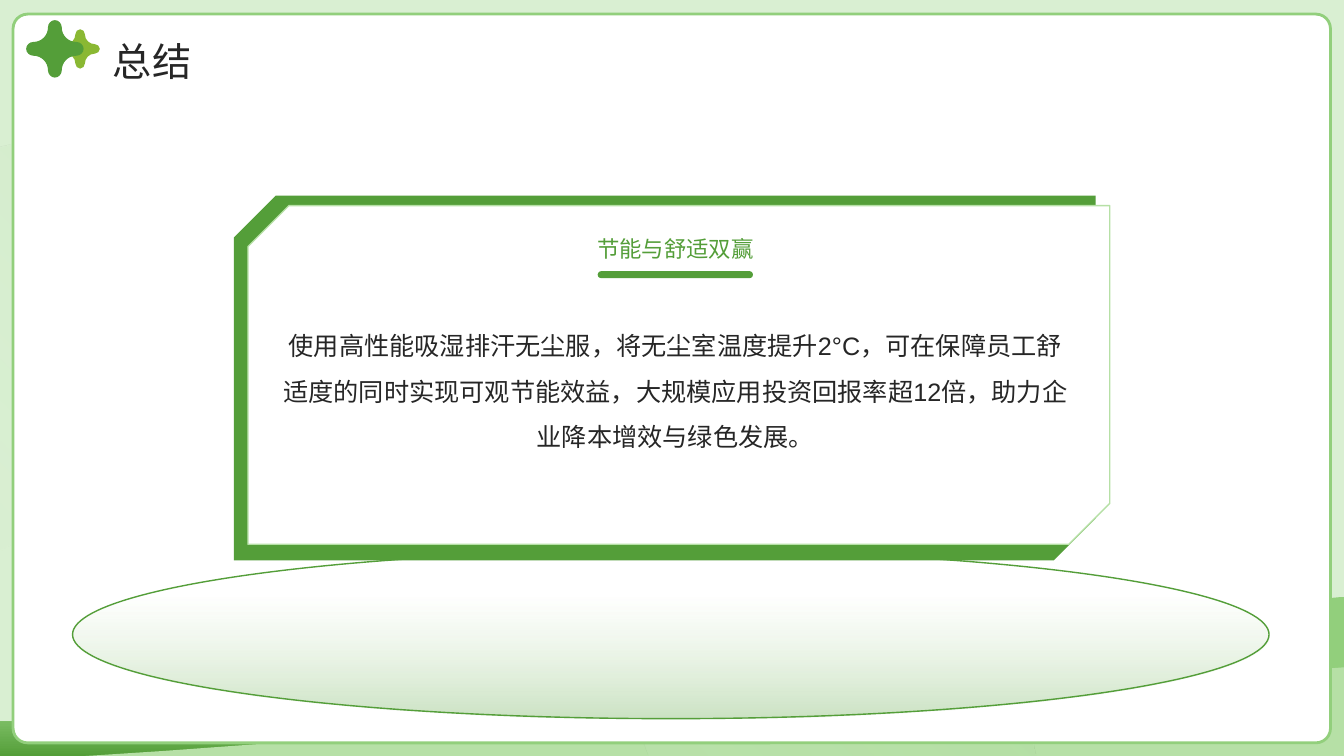
from lxml import etree
from pptx import Presentation
from pptx.dml.color import RGBColor
from pptx.enum.shapes import MSO_SHAPE
from pptx.enum.text import MSO_ANCHOR, MSO_AUTO_SIZE, PP_ALIGN
from pptx.oxml.ns import qn
from pptx.util import Inches, Pt

TITLE = "总结"
CARD_HEADING = "节能与舒适双赢"
CARD_BODY = (
    "使用高性能吸湿排汗无尘服，将无尘室温度提升2°C，可在保障员工舒适度的同时实现可观节能效益，"
    "大规模应用投资回报率超12倍，助力企业降本增效与绿色发展。"
)

FONT = "Arial"
INK = RGBColor(0x26, 0x26, 0x26)
WHITE = RGBColor(0xFF, 0xFF, 0xFF)
GREEN = RGBColor(0x54, 0x9E, 0x39)
MID_GREEN = RGBColor(0x92, 0xCF, 0x7C)
SOFT_GREEN = RGBColor(0xB6, 0xE0, 0xA6)
PALE_GREEN = RGBColor(0xD9, 0xEF, 0xD2)
LIME = RGBColor(0x8A, 0xB8, 0x33)

RECT = MSO_SHAPE.RECTANGLE
ROUNDED = MSO_SHAPE.ROUNDED_RECTANGLE
OVAL = MSO_SHAPE.OVAL
SNIPPED = MSO_SHAPE.SNIP_2_DIAG_RECTANGLE
CENTER, LEFT = PP_ALIGN.CENTER, PP_ALIGN.LEFT
TOP, BOTTOM = MSO_ANCHOR.TOP, MSO_ANCHOR.BOTTOM

HEIGHT = 7.5
WIDTH = HEIGHT * 16 / 9

# Outlines: each step is one point (a line) or three points (a Bezier curve)
HILL = [
    [(WIDTH, 5.92)], [(WIDTH, HEIGHT)], [(0, HEIGHT)], [(0, 7.16)], [(0.13, 7.16)],
    [(4.08, 7.09), (9.13, 6.34), (12.7, 5.98)],
]
SLOPE = [
    [(WIDTH, 6.62)], [(WIDTH, HEIGHT)], [(0.85, HEIGHT)], [(1.62, 7.45)],
    [(5.62, 7.16), (9.43, 6.89), (12.83, 6.66)],
]
ARCH = [
    [(2.35, 1.12)], [(1.65, 1.12), (0.97, 1.21), (0.33, 1.38)],
    [(0, 1.47)], [(0, 5.47)], [(0.05, 5.44)],
    [(0.72, 5.03), (1.51, 4.8), (2.35, 4.8)],
    [(4.12, 4.8), (5.64, 5.82), (6.36, 7.31)],
    [(6.44, HEIGHT)], [(10.28, HEIGHT)], [(10.21, 7.21)],
    [(9.31, 3.71), (6.13, 1.12), (2.35, 1.12)],
]
# One arm of a star with radius 1, turned four times
STAR_ARM = [
    [(0.75, -0.24)],
    [(0.48, -0.24), (0.24, -0.45), (0.24, -0.75)],
    [(0.24, -0.88), (0.13, -1), (0, -1)],
    [(-0.13, -1), (-0.24, -0.88), (-0.24, -0.75)],
]
# Gradient stops: position %, colour, opacity %
HILL_STOPS = [(0, MID_GREEN, 100), (65, MID_GREEN, 100), (100, GREEN, 100)]
ARCH_STOPS = [(0, MID_GREEN, 37), (85, PALE_GREEN, 10), (100, PALE_GREEN, 10)]
STAGE_STOPS = [(0, MID_GREEN, 0), (27, MID_GREEN, 0), (100, GREEN, 30)]
# Stars: left, top, size, colour
STARS = [(0.6, 0.29, 0.39, LIME), (0.26, 0.2, 0.57, GREEN)]


def paint(shape, fill, line=None, angle=90):
    """Fill with a colour or a list of gradient stops; line is (colour, points)."""
    shape.shadow.inherit = False
    if isinstance(fill, RGBColor):
        shape.fill.solid()
        shape.fill.fore_color.rgb = fill
    else:
        shape.fill.gradient()
        gradient = shape._element.spPr.find(qn("a:gradFill"))
        stop_list = gradient.find(qn("a:gsLst"))
        for old_stop in list(stop_list):
            stop_list.remove(old_stop)
        for position, color, opacity in fill:
            stop = etree.SubElement(stop_list, qn("a:gs"), pos=str(position * 1000))
            tint = etree.SubElement(stop, qn("a:srgbClr"), val=str(color))
            if opacity < 100:
                etree.SubElement(tint, qn("a:alpha"), val=str(opacity * 1000))
        gradient.find(qn("a:lin")).set("ang", str(angle * 60000))
    if line:
        shape.line.color.rgb = line[0]
        shape.line.width = Pt(line[1])
    else:
        shape.line.fill.background()


def add_preset(page, kind, area, fill, line=None, adjustments=()):
    shape = page.shapes.add_shape(kind, *map(Inches, area))
    for index, value in enumerate(adjustments):
        shape.adjustments[index] = value
    paint(shape, fill, line)


def add_outline(page, outline, fill, angle=90):
    """Draw all points as lines, then join each group of three into one curve."""
    points = [(Inches(x), Inches(y)) for step in outline for x, y in step]
    builder = page.shapes.build_freeform(*points[0])
    builder.add_line_segments(points[1:], close=True)
    shape = builder.convert_to_shape()
    segments = iter(list(shape._element.iter(qn("a:lnTo"))))
    for step in outline[1:]:
        group = [next(segments) for _ in step]
        if len(group) == 3:
            curve = etree.Element(qn("a:cubicBezTo"))
            group[0].addprevious(curve)
            for segment in group:
                curve.append(segment[0])
                segment.getparent().remove(segment)
    paint(shape, fill, angle=angle)


def star_outline(left, top, size):
    radius = size / 2
    outline, arm = [], STAR_ARM
    for _ in range(4):
        outline += [[(left + radius * (1 + x), top + radius * (1 + y)) for x, y in step]
                    for step in arm]
        arm = [[(y, -x) for x, y in step] for step in arm]
    return outline


def write(box, text, size, color, spacing, align=CENTER, anchor=TOP):
    frame = box.text_frame
    frame.word_wrap = True
    frame.auto_size = MSO_AUTO_SIZE.NONE
    frame.vertical_anchor = anchor
    frame.text = text
    para = frame.paragraphs[0]
    para.alignment = align
    para.line_spacing = spacing
    para.font.name = FONT
    para.font.size = Pt(size)
    para.font.color.rgb = color


def add_text(page, area, *args, **options):
    write(page.shapes.add_textbox(*map(Inches, area)), *args, **options)


def main():
    deck = Presentation()
    deck.slide_width, deck.slide_height = Inches(WIDTH), Inches(HEIGHT)
    page = deck.slides.add_slide(deck.slide_layouts[5])

    add_preset(page, RECT, (0, 0, WIDTH, HEIGHT), PALE_GREEN)
    add_outline(page, HILL, HILL_STOPS)
    add_outline(page, SLOPE, SOFT_GREEN)
    add_outline(page, ARCH, ARCH_STOPS, angle=135)
    add_preset(page, ROUNDED, (0.13, 0.14, 13.07, 7.23), WHITE, (MID_GREEN, 2), (0.02,))

    add_preset(page, OVAL, (0.72, 5.46, 11.87, 1.67), STAGE_STOPS, (GREEN, 1))
    add_preset(page, SNIPPED, (2.32, 1.94, 8.55, 3.62), GREEN, None, (0.115, 0))
    add_preset(page, SNIPPED, (2.46, 2.04, 8.55, 3.36), WHITE, (SOFT_GREEN, 1), (0.121, 0))
    add_text(page, (2.67, 3.08, 8.06, 2.14), CARD_BODY, 18, INK, 1.5)
    add_preset(page, ROUNDED, (5.93, 2.69, 1.54, 0.07), GREEN, None, (0.5,))
    add_text(page, (2.67, 2.17, 8.06, 0.48), CARD_HEADING, 16, GREEN, 1.3, anchor=BOTTOM)

    title = page.shapes.title
    title.left, title.top, title.width, title.height = map(Inches, (1.02, 0.18, 11.38, 0.57))
    write(title, TITLE, 28, INK, 1.3, align=LEFT)
    page.shapes._spTree.append(title._element)  # bring the title in front of the panel
    for left, top, size, color in STARS:
        add_outline(page, star_outline(left, top, size), color)

    deck.save("out.pptx")


if __name__ == "__main__":
    main()
